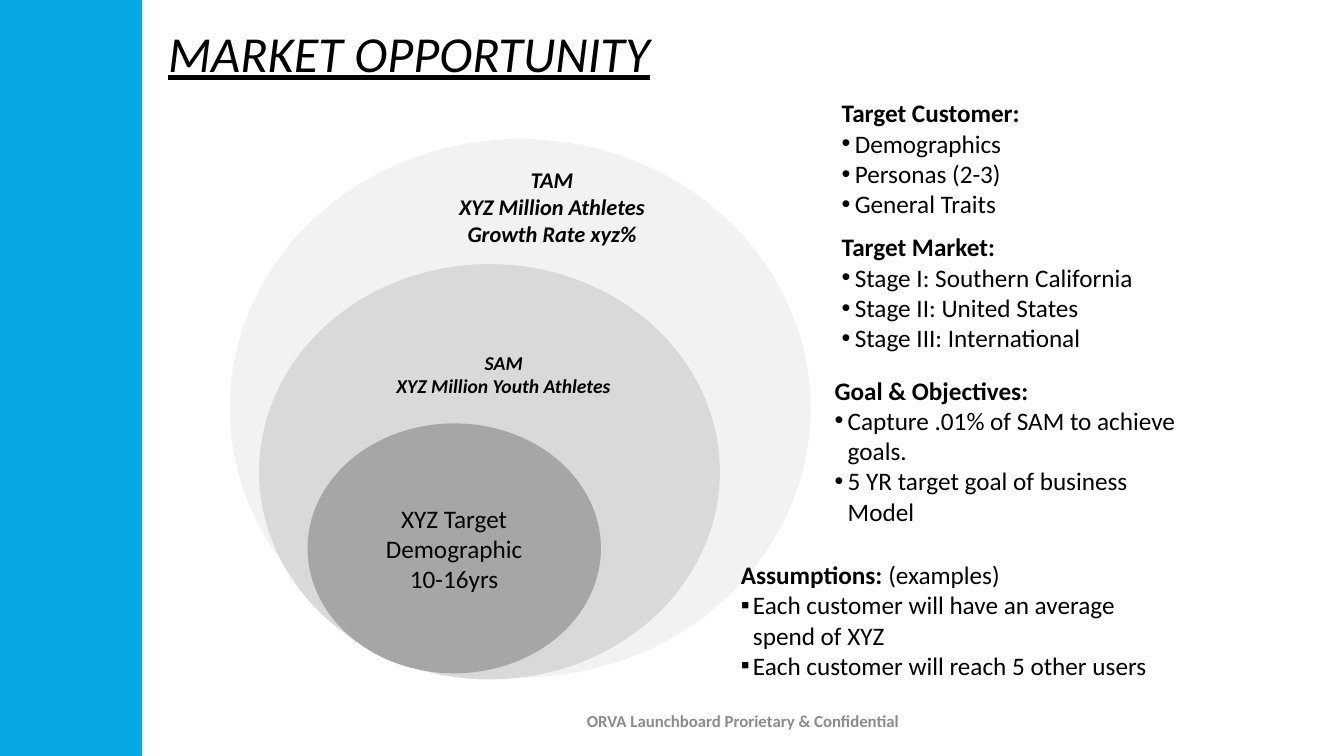
from lxml import etree
from pptx import Presentation
from pptx import util as u
from pptx.dml.color import RGBColor
from pptx.enum import shapes, text
from pptx.oxml.ns import qn

CENTER = text.PP_ALIGN.CENTER
LEFT = text.PP_ALIGN.LEFT


def color(value):
    return RGBColor.from_string(value)


def write(frame, lines, size, align=LEFT, ink="000000", bullet=None, indent=0.13):
    frame.word_wrap = True
    for index, runs in enumerate(lines):
        paragraph = frame.paragraphs[0] if index == 0 else frame.add_paragraph()
        paragraph.alignment = align
        if bullet and index > 0:
            properties = paragraph._p.get_or_add_pPr()
            properties.set("marL", str(u.Inches(indent)))
            properties.set("indent", str(-u.Inches(indent)))
            etree.SubElement(properties, qn("a:buFont")).set("typeface", "Arial")
            etree.SubElement(properties, qn("a:buChar")).set("char", bullet)
        for words, style in runs:
            run = paragraph.add_run()
            run.text = words
            run.font.name = "Calibri"
            run.font.size = u.Pt(size)
            run.font.color.rgb = color(ink)
            run.font.bold = "b" in style
            run.font.italic = "i" in style
            run.font.underline = "u" in style


presentation = Presentation()
presentation.slide_width = u.Inches(13.33)
presentation.slide_height = u.Inches(7.5)
slide = presentation.slides.add_slide(presentation.slide_layouts[6])

OVAL = shapes.MSO_SHAPE.OVAL
filled_shapes = [
    (shapes.MSO_SHAPE.RECTANGLE, (0, 0, 1.41, 7.5), "05A8E3"),
    (OVAL, (2.28, 1.38, 5.76, 5.34), "F2F2F2"),
    (OVAL, (2.57, 2.62, 4.57, 4.12), "D9D9D9"),
    (OVAL, (3.05, 4.2, 2.91, 2.48), "A6A6A6"),
]
for kind, place, fill in filled_shapes:
    shape = slide.shapes.add_shape(kind, *map(u.Inches, place))
    shape.shadow.inherit = False
    shape.fill.solid()
    shape.fill.fore_color.rgb = color(fill)
    shape.line.fill.background()

target_frame = shape.text_frame
target_frame.vertical_anchor = text.MSO_ANCHOR.MIDDLE
target_frame.margin_top = target_frame.margin_bottom = u.Inches(0.1)
write(target_frame, [[("XYZ Target Demographic", "")], [("10-16yrs", "")]], 18, CENTER)

title = slide.shapes.add_textbox(*map(u.Inches, (1.57, 0.17, 5.03, 0.71)))
write(title.text_frame, [[("MARKET OPPORTUNITY", "iu")]], 36)
title.text_frame.word_wrap = False

market_labels = [
    ((3.22, 3.43, 3.55, 0.81), 14, ["SAM", "XYZ Million Youth Athletes"]),
    ((3.7, 1.6, 3.55, 1.18), 16, ["TAM", "XYZ Million Athletes", "Growth Rate xyz%"]),
]
for place, size, lines in market_labels:
    label = slide.shapes.add_textbox(*map(u.Inches, place))
    write(label.text_frame, [[(line, "bi")] for line in lines], size, CENTER)

lists = [
    ((8.25, 0.92, 2.8, 1.31), [("Target Customer:", "b")], "•", 0.13,
     ["Demographics", "Personas (2-3)", "General Traits"]),
    ((8.25, 2.25, 3.74, 1.55), [("Target Market:", "b")], "•", 0.13,
     ["Stage I: Southern California", "Stage II: United States",
      "Stage III: International"]),
    ((8.18, 3.67, 3.74, 1.85), [("Goal & Objectives:", "b")], "•", 0.13,
     ["Capture .01% of SAM to achieve goals.",
      "5 YR target goal of business Model"]),
    ((7.25, 5.5, 4.5, 1.31), [("Assumptions: ", "b"), ("(examples)", "")], "▪", 0.12,
     ["Each customer will have an average spend of XYZ",
      "Each customer will reach 5 other users"]),
]
for place, heading, bullet, indent, items in lists:
    box = slide.shapes.add_textbox(*map(u.Inches, place))
    lines = [heading] + [[(item, "")] for item in items]
    write(box.text_frame, lines, 18, bullet=bullet, indent=indent)

footer = slide.shapes.add_textbox(*map(u.Inches, (5.12, 6.95, 4.5, 0.4)))
footer.text_frame.vertical_anchor = text.MSO_ANCHOR.MIDDLE
write(footer.text_frame, [[("ORVA Launchboard Prorietary & Confidential", "b")]],
      12, CENTER, "8C8C8C")

presentation.save("out.pptx")
